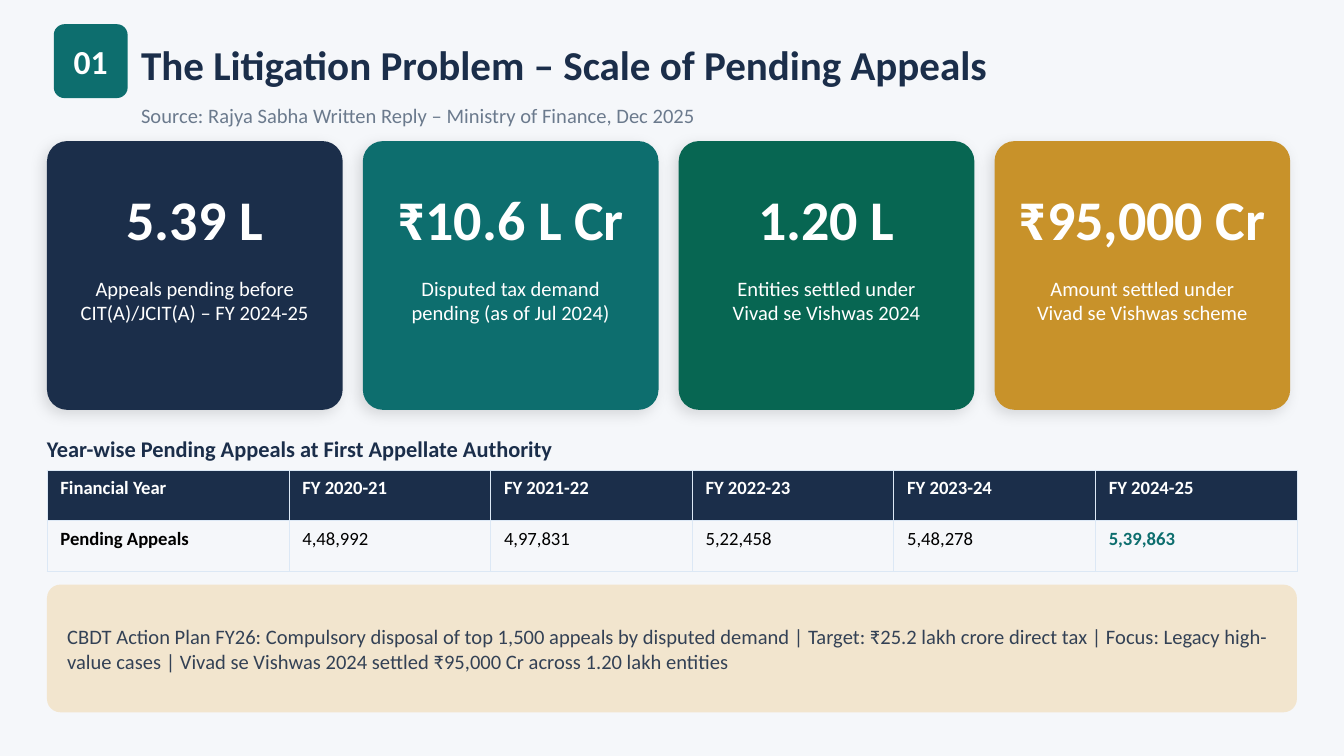
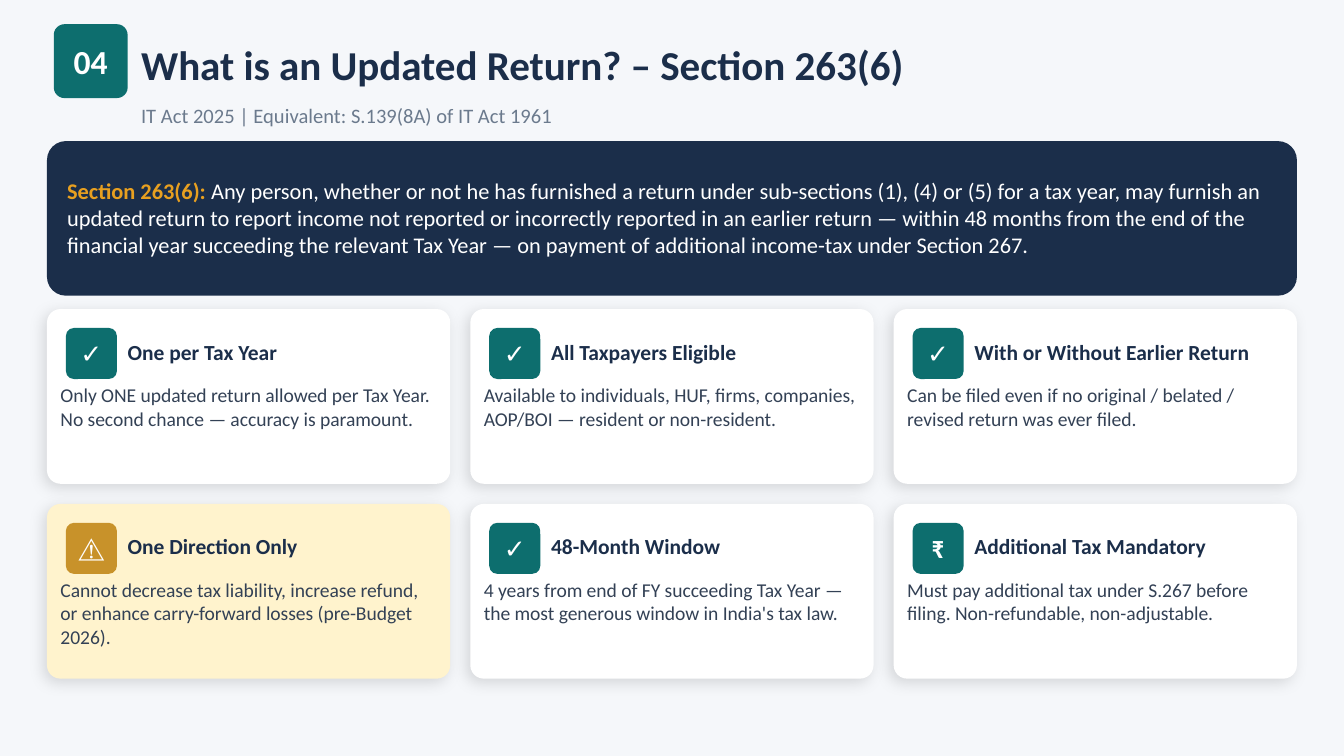
from lxml import etree
from pptx import Presentation
from pptx import util as u
from pptx.dml import color
from pptx.enum import shapes, text
from pptx.oxml import ns

COLUMNS, ROWS = 100, 56.25
LEFT, WIDTH, GAP = 3.5, 93, 1.5
FONT = "Calibri"
NAVY, TEAL, GREEN, GOLD = "1B2E4A", "0D6E6E", "076652", "C8922A"
AMBER, CREAM, WHITE, BLACK = "E8A020", "FFF3CD", "FFFFFF", "000000"
PAPER, SLATE, GREY, RULE = "F5F7FA", "334155", "6B7A8D", "DCE8F5"
CENTER, START = text.PP_ALIGN.CENTER, text.PP_ALIGN.LEFT
MIDDLE, TOP = text.MSO_ANCHOR.MIDDLE, text.MSO_ANCHOR.TOP


def rgb(value):
    return color.RGBColor.from_string(value)


def add_xml(parent, tag, **attributes):
    return etree.SubElement(parent, ns.qn(tag), {key: str(value) for key, value in attributes.items()})


class Board:
    def __init__(self, deck):
        self.deck = deck
        self.page = None
        self.column = deck.slide_width / COLUMNS
        self.row = deck.slide_height / ROWS

    def area(self, left, top, width, height):
        return (u.Emu(round(left * self.column)), u.Emu(round(top * self.row)),
                u.Emu(round(width * self.column)), u.Emu(round(height * self.row)))

    def style(self, span, size, tint, bold=False):
        span.font.name = FONT
        span.font.size = u.Pt(size)
        span.font.bold = bold
        span.font.color.rgb = rgb(tint)

    def set_words(self, shape, words, size, tint, bold=False, align=START, anchor=MIDDLE):
        frame = shape.text_frame
        frame.text = words
        frame.word_wrap = True
        frame.auto_size = text.MSO_AUTO_SIZE.NONE
        frame.vertical_anchor = anchor
        frame.margin_left = frame.margin_right = frame.margin_top = frame.margin_bottom = 0
        for para in frame.paragraphs:
            para.alignment = align
            for span in para.runs:
                self.style(span, size, tint, bold)

    def label(self, place, words, size, tint, **look):
        box = self.page.shapes.add_textbox(*self.area(*place))
        self.set_words(box, words, size, tint, **look)
        return box

    def panel(self, place, fill, radius, shadow=False, opacity=None):
        shape = self.page.shapes.add_shape(shapes.MSO_SHAPE.ROUNDED_RECTANGLE, *self.area(*place))
        shape.adjustments[0] = radius / min(place[2:])
        shape.fill.solid()
        shape.fill.fore_color.rgb = rgb(fill)
        shape.line.fill.background()
        shape.shadow.inherit = False
        properties = shape._element.spPr
        if opacity:
            add_xml(properties.find(".//" + ns.qn("a:srgbClr")), "a:alpha", val=opacity * 1000)
        if shadow:
            outer = add_xml(properties.find(ns.qn("a:effectLst")), "a:outerShdw", blurRad=u.Pt(8),
                            dist=u.Pt(3), dir=135 * 60000, algn="bl", rotWithShape=0)
            add_xml(add_xml(outer, "a:srgbClr", val=BLACK), "a:alpha", val=12000)
        return shape

    def badge(self, left, top, side, words, size, fill, radius):
        shape = self.panel((left, top, side, side), fill, radius)
        self.set_words(shape, words, size, WHITE, bold=True, align=CENTER)

    def start(self, number, title, subtitle):
        self.page = self.deck.slides.add_slide(self.deck.slide_layouts[5])
        self.page.background.fill.solid()
        self.page.background.fill.fore_color.rgb = rgb(PAPER)
        heading = self.page.shapes.title
        heading.left, heading.top, heading.width, heading.height = self.area(10.5, 2, 86, 5.5)
        self.set_words(heading, title, 22, NAVY, bold=True)
        self.badge(4, 1.8, 5.5, number, 18, TEAL, 0.8)
        self.label((10.5, 7.2, 86, 2.8), subtitle, 11, GREY)

    def figure_card(self, left, figure, caption, fill):
        self.panel((left, 10.5, 22, 20), fill, 1.5, shadow=True)
        self.label((left, 12, 22, 8.5), figure, 30, WHITE, bold=True, align=CENTER)
        self.label((left + 1, 20.5, 20, 8.5), caption, 11, WHITE, align=CENTER, anchor=TOP)

    def rule_card(self, left, top, icon, heading, body, fill=WHITE, accent=TEAL):
        self.panel((left, top, 30, 13), fill, 1, shadow=True)
        self.badge(left + 1.4, top + 1.4, 3.8, icon, 14, accent, 0.6)
        self.label((left + 6, top + 1.4, 22.8, 3.5), heading, 11.5, NAVY, bold=True)
        self.label((left + 1, top + 5.5, 27.8, 6.5), body, 10.5, SLATE, anchor=TOP)

    def border(self, cell):
        properties = cell._tc.get_or_add_tcPr()
        for index, side in enumerate(("a:lnL", "a:lnR", "a:lnT", "a:lnB")):
            line = etree.Element(ns.qn(side), w=str(u.Pt(0.5)))
            add_xml(add_xml(line, "a:solidFill"), "a:srgbClr", val=RULE)
            properties.insert(index, line)

    def table(self, place, widths, records):
        grid = self.page.shapes.add_table(len(records), len(widths), *self.area(*place)).table
        grid.horz_banding = False
        for column, width in zip(grid.columns, widths):
            column.width = u.Emu(round(width * self.column))
        last = len(widths) - 1
        for r, record in enumerate(records):
            for c, words in enumerate(record):
                cell = grid.cell(r, c)
                cell.text = words
                if r == 0:
                    cell.fill.solid()
                    cell.fill.fore_color.rgb = rgb(NAVY)
                    tint = WHITE
                else:
                    cell.fill.background()
                    tint = TEAL if c == last else BLACK
                self.style(cell.text_frame.paragraphs[0].runs[0], 10, tint, r == 0 or c in (0, last))
                self.border(cell)


def pending_appeals(board):
    board.start("01", "The Litigation Problem – Scale of Pending Appeals",
                "Source: Rajya Sabha Written Reply – Ministry of Finance, Dec 2025")
    cards = [
        ("5.39 L", "Appeals pending before\nCIT(A)/JCIT(A) – FY 2024-25", NAVY),
        ("₹10.6 L Cr", "Disputed tax demand\npending (as of Jul 2024)", TEAL),
        ("1.20 L", "Entities settled under\nVivad se Vishwas 2024", GREEN),
        ("₹95,000 Cr", "Amount settled under\nVivad se Vishwas scheme", GOLD),
    ]
    for index, card in enumerate(cards):
        board.figure_card(LEFT + index * (22 + GAP), *card)
    board.label((LEFT, 32, WIDTH, 2.8), "Year-wise Pending Appeals at First Appellate Authority",
                12, NAVY, bold=True)
    board.table((LEFT, 35, WIDTH, 7.5), [18] + [15] * 5, [
        ["Financial Year", "FY 2020-21", "FY 2021-22", "FY 2022-23", "FY 2023-24", "FY 2024-25"],
        ["Pending Appeals", "4,48,992", "4,97,831", "5,22,458", "5,48,278", "5,39,863"],
    ])
    board.panel((LEFT, 43.5, WIDTH, 9.5), AMBER, 1, opacity=20)
    board.label((5, 43.8, 90, 8.9),
                "CBDT Action Plan FY26: Compulsory disposal of top 1,500 appeals by disputed demand | "
                "Target: ₹25.2 lakh crore direct tax | Focus: Legacy high-value cases | "
                "Vivad se Vishwas 2024 settled ₹95,000 Cr across 1.20 lakh entities", 11, SLATE)


def updated_return(board):
    board.start("04", "What is an Updated Return? – Section 263(6)",
                "IT Act 2025 | Equivalent: S.139(8A) of IT Act 1961")
    board.panel((LEFT, 10.5, WIDTH, 11.5), NAVY, 1.4)
    box = board.label((5, 10.8, 91, 10.8), "Section 263(6): ", 12, AMBER, bold=True)
    span = box.text_frame.paragraphs[0].add_run()
    span.text = ("Any person, whether or not he has furnished a return under sub-sections (1), (4) or (5) "
                 "for a tax year, may furnish an updated return to report income not reported or "
                 "incorrectly reported in an earlier return — within 48 months from the end of the "
                 "financial year succeeding the relevant Tax Year — on payment of additional income-tax "
                 "under Section 267.")
    board.style(span, 12, WHITE)
    rules = [
        ("✓", "One per Tax Year",
         "Only ONE updated return allowed per Tax Year. No second chance — accuracy is paramount."),
        ("✓", "All Taxpayers Eligible",
         "Available to individuals, HUF, firms, companies, AOP/BOI — resident or non-resident."),
        ("✓", "With or Without Earlier Return",
         "Can be filed even if no original / belated / revised return was ever filed."),
        ("⚠", "One Direction Only",
         "Cannot decrease tax liability, increase refund, or enhance carry-forward losses "
         "(pre-Budget 2026).", CREAM, GOLD),
        ("✓", "48-Month Window",
         "4 years from end of FY succeeding Tax Year — the most generous window in India's tax law."),
        ("₹", "Additional Tax Mandatory",
         "Must pay additional tax under S.267 before filing. Non-refundable, non-adjustable."),
    ]
    for index, rule in enumerate(rules):
        row, column = divmod(index, 3)
        board.rule_card(LEFT + column * (30 + GAP), 23 + row * (13 + GAP), *rule)


def main():
    deck = Presentation()
    deck.slide_width, deck.slide_height = u.Inches(10), u.Inches(5.625)
    board = Board(deck)
    pending_appeals(board)
    updated_return(board)
    deck.save("out.pptx")


if __name__ == "__main__":
    main()
